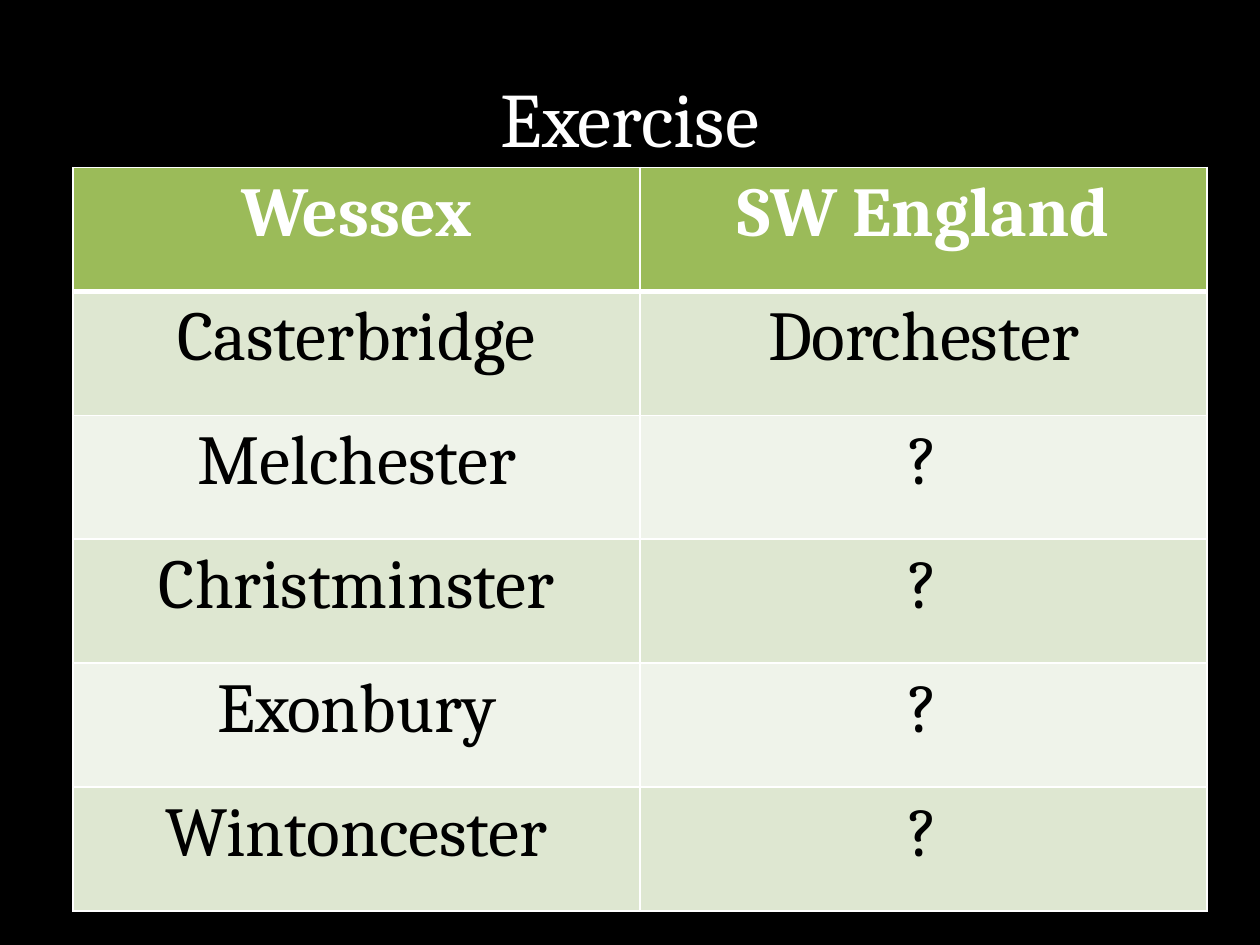
"""Build the exercise slide pairing Wessex names with places in SW England."""
import pptx
import pptx.dml.color
import pptx.enum.text
import pptx.oxml.ns
import pptx.util
from lxml import etree

HEADING = "Exercise"
PLACES = [
    ("Wessex", "SW England"),
    ("Casterbridge", "Dorchester"),
    ("Melchester", "?"),
    ("Christminster", "?"),
    ("Exonbury", "?"),
    ("Wintoncester", "?"),
]
COLORS = {
    "background": "000000",
    "light": "FFFFFF",
    "dark": "000000",
    "header": "9BBB59",
    "odd": "DEE7D1",
    "even": "EFF3EA",
}
FONT = "Cambria"
WIDTH, HEIGHT = 10, 7.5
HEADING_BOX = (0.5, 0.3, 9, 1.25)
GRID_BOX = (0.58, 1.33, 9, 5.9)
THIN, THICK = 1, 3


def rgb(name):
    return pptx.dml.color.RGBColor.from_string(COLORS[name])


def inches(box):
    return [pptx.util.Inches(length) for length in box]


def write(frame, text, size=40, color="dark", bold=False):
    paragraph = frame.paragraphs[0]
    paragraph.alignment = pptx.enum.text.PP_ALIGN.CENTER
    run = paragraph.add_run()
    run.text = text
    run.font.name = FONT
    run.font.size = pptx.util.Pt(size)
    run.font.bold = bold
    run.font.color.rgb = rgb(color)


def add_borders(cell, top, bottom):
    properties = cell._tc.get_or_add_tcPr()
    for side, weight in (("L", THIN), ("R", THIN), ("T", top), ("B", bottom)):
        line = etree.SubElement(properties, pptx.oxml.ns.qn(f"a:ln{side}"),
                                w=str(pptx.util.Pt(weight)))
        paint = etree.SubElement(line, pptx.oxml.ns.qn("a:solidFill"))
        etree.SubElement(paint, pptx.oxml.ns.qn("a:srgbClr"), val=COLORS["light"])


def add_heading(slide):
    heading = slide.shapes.title
    heading.left, heading.top, heading.width, heading.height = inches(HEADING_BOX)
    heading.text_frame.vertical_anchor = pptx.enum.text.MSO_ANCHOR.MIDDLE
    write(heading.text_frame, HEADING, size=44, color="light")


def add_places(slide):
    grid = slide.shapes.add_table(len(PLACES), len(PLACES[0]), *inches(GRID_BOX)).table
    for row, names in enumerate(PLACES):
        is_header = row == 0
        band = "header" if is_header else "odd" if row % 2 else "even"
        for column, name in enumerate(names):
            cell = grid.cell(row, column)
            add_borders(cell, top=THICK if row == 1 else THIN,
                        bottom=THICK if is_header else THIN)
            cell.fill.solid()
            cell.fill.fore_color.rgb = rgb(band)
            write(cell.text_frame, name, color="light" if is_header else "dark",
                  bold=is_header)


def main():
    deck = pptx.Presentation()
    deck.slide_width, deck.slide_height = inches((WIDTH, HEIGHT))
    slide = deck.slides.add_slide(deck.slide_layouts.get_by_name("Title Only"))
    slide.background.fill.solid()
    slide.background.fill.fore_color.rgb = rgb("background")
    add_heading(slide)
    add_places(slide)
    deck.save("out.pptx")


if __name__ == "__main__":
    main()
